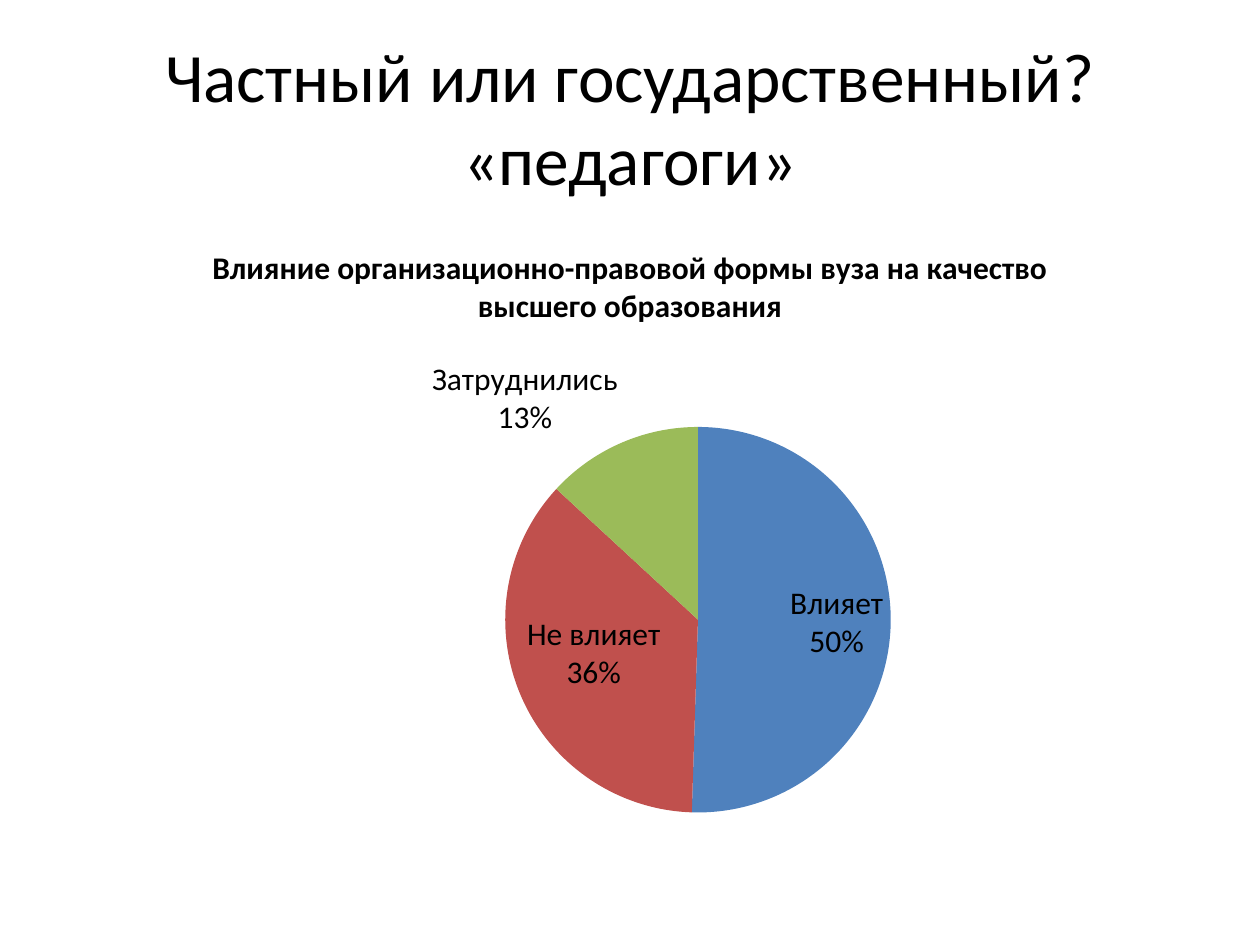
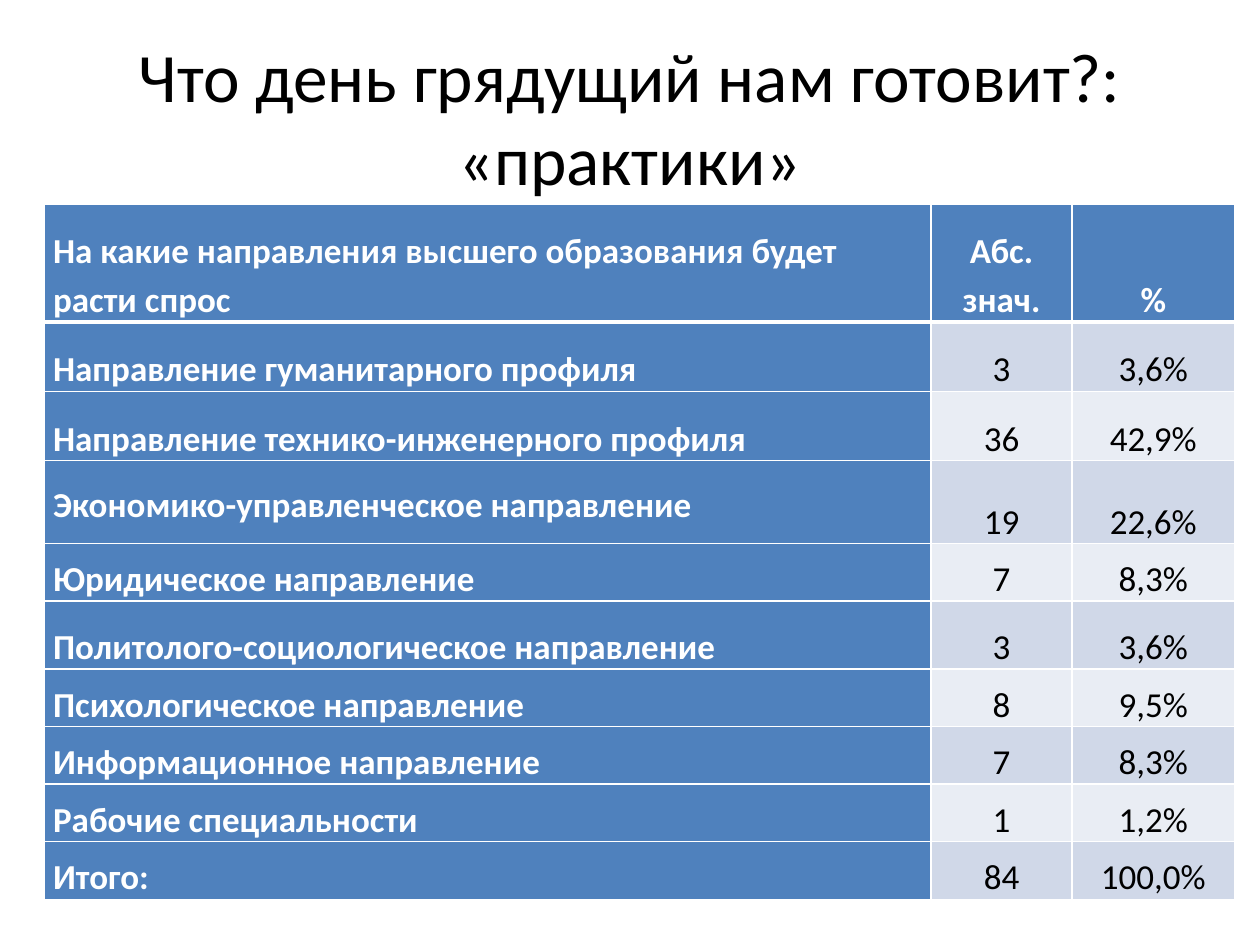
from copy import deepcopy
from dataclasses import dataclass

from lxml.etree import SubElement
from pptx import Presentation
from pptx.chart.data import CategoryChartData
from pptx.dml.color import RGBColor
from pptx.enum.chart import XL_CHART_TYPE as ChartType, XL_LABEL_POSITION as LabelPos
from pptx.enum.text import MSO_ANCHOR as Anchor, PP_ALIGN as Align
from pptx.oxml import parse_xml
from pptx.oxml.ns import nsdecls, qn
from pptx.util import Cm, Pt


@dataclass(frozen=True)
class Theme:
    font: str = "Calibri"
    black: str = "000000"
    white: str = "FFFFFF"
    blue: str = "4F81BD"
    red: str = "C0504D"
    green: str = "9BBB59"
    band_dark: str = "D0D8E8"
    band_light: str = "E9EDF4"
    title_size: float = 39.6
    chart_size: float = 18
    table_size: float = 20


@dataclass(frozen=True)
class Box:
    left: float
    top: float
    width: float
    height: float

    def lengths(self) -> tuple:
        return Cm(self.left), Cm(self.top), Cm(self.width), Cm(self.height)


@dataclass(frozen=True)
class Slice:
    name: str
    percent: int
    color: str


@dataclass(frozen=True)
class Demand:
    direction: str
    count: str
    share: str
    height: float = 1.16
    anchor: Anchor = Anchor.BOTTOM


THEME = Theme()
TITLE_BOX = Box(1.27, 0.76, 22.86, 3.18)
CHART_BOX = Box(1.27, 4.45, 22.86, 12.57)
TABLE_BOX = Box(0.89, 4.11, 24, 14)
COLUMN_WIDTHS = (17.88, 2.84, 3.28)
PIE_LAYOUT = {"x": 0.39, "y": 0.33, "w": 0.34, "h": 0.62}

INFLUENCE_TITLE = "Влияние организационно-правовой формы вуза на качество высшего образования"
INFLUENCE = (
    Slice("Влияет", 50, THEME.blue),
    Slice("Не влияет", 36, THEME.red),
    Slice("Затруднились", 13, THEME.green),
)
DEMAND = (
    Demand("На какие направления высшего образования будет расти спрос", "Абс. знач.", "%", 2.38),
    Demand("Направление гуманитарного профиля", "3", "3,6%", 1.4),
    Demand("Направление технико-инженерного профиля", "36", "42,9%", 1.4),
    Demand("Экономико-управленческое направление", "19", "22,6%", 1.67, Anchor.MIDDLE),
    Demand("Юридическое направление", "7", "8,3%"),
    Demand("Политолого-социологическое направление", "3", "3,6%", 1.37),
    Demand("Психологическое направление", "8", "9,5%"),
    Demand("Информационное направление", "7", "8,3%"),
    Demand("Рабочие специальности", "1", "1,2%"),
    Demand("Итого:", "84", "100,0%"),
)


def set_font(font, size: float, color: str, bold: bool = False) -> None:
    font.name = THEME.font
    font.size = Pt(size)
    font.bold = bold
    font.color.rgb = RGBColor.from_string(color)


def add_titled_slide(prs, title: str):
    s = prs.slides.add_slide(prs.slide_layouts[6])
    tf = s.shapes.add_textbox(*TITLE_BOX.lengths()).text_frame
    tf.word_wrap = True
    tf.vertical_anchor = Anchor.MIDDLE
    p = tf.paragraphs[0]
    p.text = title
    p.alignment = Align.CENTER
    for r in p.runs:
        set_font(r.font, THEME.title_size, THEME.black)
    return s


def place_plot(chart, layout: dict[str, float]) -> None:
    plot_area = chart._chartSpace.chart.plotArea
    for old in plot_area.findall(qn("c:layout")):
        plot_area.remove(old)
    values = "".join(f'<c:{side} val="{value}"/>' for side, value in layout.items())
    plot_area.insert(0, parse_xml(
        f'<c:layout {nsdecls("c")}><c:manualLayout><c:layoutTarget val="inner"/>'
        f'<c:xMode val="edge"/><c:yMode val="edge"/>{values}</c:manualLayout></c:layout>'))


def label_slices(series, outside: int) -> None:
    labels = series.data_labels
    labels.show_category_name = True
    labels.show_value = True
    labels.show_percentage = False
    labels.number_format = '0"%"'
    labels.number_format_is_linked = False
    labels.position = LabelPos.INSIDE_END
    set_font(labels.font, THEME.chart_size, THEME.black)
    root = labels._element
    for old in root.findall(qn("c:showLeaderLines")):
        root.remove(old)
    SubElement(root, qn("c:separator")).text = "\n"
    label = parse_xml(f'<c:dLbl {nsdecls("c")}><c:idx val="{outside}"/></c:dLbl>')
    label.extend(deepcopy(child) for child in root)
    label.find(qn("c:dLblPos")).set("val", "outEnd")
    root.insert(0, label)


def add_pie(s, title: str, slices: tuple[Slice, ...]) -> None:
    data = CategoryChartData()
    data.categories = [item.name for item in slices]
    data.add_series(title, [item.percent for item in slices])
    chart = s.shapes.add_chart(ChartType.PIE, *CHART_BOX.lengths(), data).chart
    set_font(chart.font, THEME.chart_size, THEME.black)
    chart.has_legend = False
    chart.has_title = True
    tf = chart.chart_title.text_frame
    tf.text = title
    set_font(tf.paragraphs[0].runs[0].font, THEME.chart_size, THEME.black, bold=True)
    chart.chart_title.include_in_layout = False
    plot = chart.plots[0]
    plot.vary_by_categories = True
    series = plot.series[0]
    for i, item in enumerate(slices):
        fill = series.points[i].format.fill
        fill.solid()
        fill.fore_color.rgb = RGBColor.from_string(item.color)
    label_slices(series, outside=len(slices) - 1)
    place_plot(chart, PIE_LAYOUT)


def set_borders(cell, top: float, bottom: float) -> None:
    tc_pr = cell._tc.get_or_add_tcPr()
    for i, (side, width) in enumerate({"L": 1, "R": 1, "T": top, "B": bottom}.items()):
        tc_pr.insert(i, parse_xml(
            f'<a:ln{side} {nsdecls("a")} w="{Pt(width)}"><a:solidFill>'
            f'<a:srgbClr val="{THEME.white}"/></a:solidFill></a:ln{side}>'))


def fill_cell(cell, text: str, row: int, col: int, anchor: Anchor) -> None:
    heading = row == 0 or col == 0
    band = THEME.band_dark if row % 2 else THEME.band_light
    cell.margin_left = cell.margin_right = Cm(0.18)
    cell.margin_top = cell.margin_bottom = 0
    cell.vertical_anchor = anchor
    cell.fill.solid()
    cell.fill.fore_color.rgb = RGBColor.from_string(THEME.blue if heading else band)
    set_borders(cell, top=3 if row == 1 else 1, bottom=3 if row == 0 else 1)
    p = cell.text_frame.paragraphs[0]
    p.text = text
    p.line_spacing = 1.15
    p.alignment = Align.CENTER if col else Align.LEFT
    set_font(p.runs[0].font, THEME.table_size, THEME.white if heading else THEME.black, heading)


def add_demand_table(s, rows: tuple[Demand, ...]) -> None:
    table = s.shapes.add_table(len(rows), len(COLUMN_WIDTHS), *TABLE_BOX.lengths()).table
    for column, width in zip(table.columns, COLUMN_WIDTHS):
        column.width = Cm(width)
    for i, item in enumerate(rows):
        table.rows[i].height = Cm(item.height)
        for j, text in enumerate((item.direction, item.count, item.share)):
            anchor = Anchor.BOTTOM if j else item.anchor
            fill_cell(table.cell(i, j), text, i, j, anchor)


def main() -> None:
    prs = Presentation()
    prs.slide_width, prs.slide_height = Cm(25.4), Cm(19.05)
    s = add_titled_slide(prs, "Частный или государственный?\v«педагоги»")
    add_pie(s, INFLUENCE_TITLE, INFLUENCE)
    s = add_titled_slide(prs, "Что день грядущий нам готовит?: «практики»")
    add_demand_table(s, DEMAND)
    prs.save("out.pptx")


if __name__ == "__main__":
    main()
